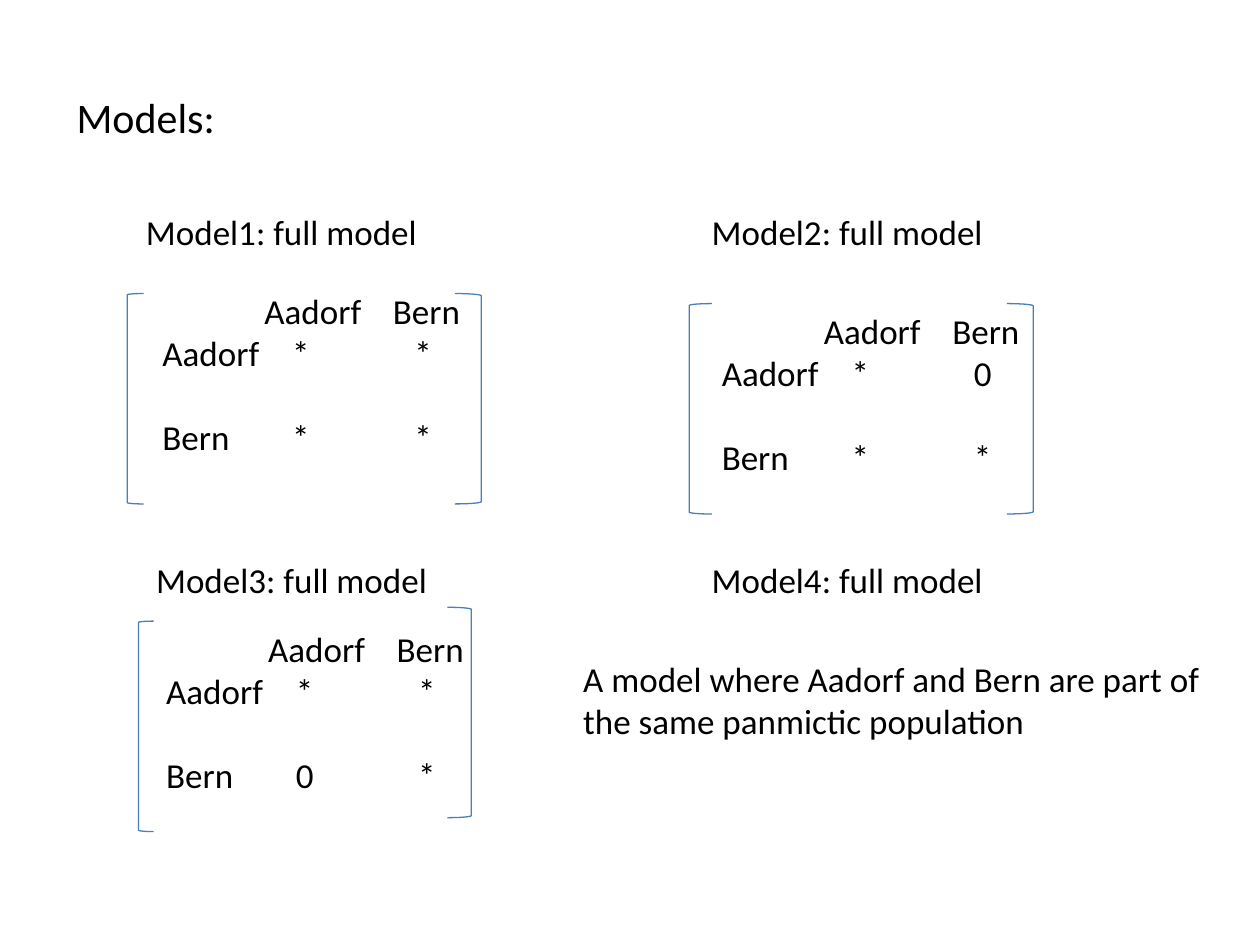
from lxml.etree import SubElement
from pptx import Presentation
from pptx.dml.color import RGBColor
from pptx.enum.shapes import MSO_SHAPE as Shape
from pptx.oxml.ns import qn
from pptx.util import Inches, Pt

BLACK = RGBColor(0x00, 0x00, 0x00)
BRACKET_BLUE = RGBColor(0x4B, 0x7E, 0xBC)
FONT = "Calibri"
BODY_SIZE = 20
BRACKET_HEIGHT = 1.67
HEADER_TABS = (0.81, 1.83)
ENTRY_TABS = (1.03, 2.0)

HEADINGS = (
    ("Model1: full model", 1.06, 1.62),
    ("Model2: full model", 5.55, 1.62),
    ("Model3: full model", 1.14, 4.38),
    ("Model4: full model", 5.55, 4.38),
)
MATRICES = (
    ((1.19, 2.25, 2.79), ("**", "**"), (1.01, 2.33, 0.13), (3.61, 2.33, 0.21)),
    ((5.63, 2.41, 2.88), ("*0", "**"), (5.47, 2.41, 0.18), (7.99, 2.41, 0.21)),
    ((1.22, 4.93, 2.99), ("**", "0*"), (1.1, 4.93, 0.12), (3.55, 4.82, 0.19)),
)


def format_runs(paragraph, size):
    """Apply the slide font to every run of a paragraph."""
    for run in paragraph.runs:
        run.font.name = FONT
        run.font.size = Pt(size)
        run.font.color.rgb = BLACK


def add_text(slide, text, left, top, width, height, size=BODY_SIZE):
    """Add a wrapping text box and return its text frame."""
    box = slide.shapes.add_textbox(
        Inches(left), Inches(top), Inches(width), Inches(height))
    frame = box.text_frame
    frame.word_wrap = True
    frame.text = text
    for paragraph in frame.paragraphs:
        format_runs(paragraph, size)
    return frame


def set_tabs(paragraph, positions):
    """Give a paragraph left-aligned tab stops."""
    tab_list = SubElement(paragraph._p.get_or_add_pPr(), qn("a:tabLst"))
    for position in positions:
        SubElement(tab_list, qn("a:tab"), pos=str(Inches(position)), algn="l")


def add_bracket(slide, preset, left, top, width):
    """Add one thin matrix bracket."""
    bracket = slide.shapes.add_shape(
        preset, Inches(left), Inches(top), Inches(width), Inches(BRACKET_HEIGHT))
    bracket.shadow.inherit = False
    bracket.fill.background()
    bracket.line.color.rgb = BRACKET_BLUE
    bracket.line.width = Pt(0.75)


def add_matrix(slide, place, entries, left_bracket, right_bracket):
    """Add a migration matrix between its two brackets."""
    aadorf_entries, bern_entries = entries
    rows = (
        "\tAadorf\tBern",
        "\t".join(("Aadorf", *aadorf_entries)),
        "\t".join(("Bern", *bern_entries)),
    )
    frame = add_text(slide, "\n".join(rows), *place, 1.45)
    header, aadorf, bern = frame.paragraphs
    bern.space_before = Pt(24)
    for row, tabs in ((header, HEADER_TABS), (aadorf, ENTRY_TABS), (bern, ENTRY_TABS)):
        set_tabs(row, tabs)
    add_bracket(slide, Shape.LEFT_BRACKET, *left_bracket)
    add_bracket(slide, Shape.RIGHT_BRACKET, *right_bracket)


def main():
    """Build the slide of migration models."""
    deck = Presentation()
    deck.slide_width, deck.slide_height = Inches(10), Inches(7.5)
    slide = deck.slides.add_slide(deck.slide_layouts[6])
    add_text(slide, "Models:", 0.51, 0.68, 4.17, 0.5, size=24)
    for heading, left, top in HEADINGS:
        add_text(slide, heading, left, top, 2.68, 0.44)
    for matrix in MATRICES:
        add_matrix(slide, *matrix)
    add_text(
        slide,
        "A model where Aadorf and Bern are part of the same panmictic population",
        4.53, 5.17, 5.12, 1.08)
    deck.save("out.pptx")


if __name__ == "__main__":
    main()
